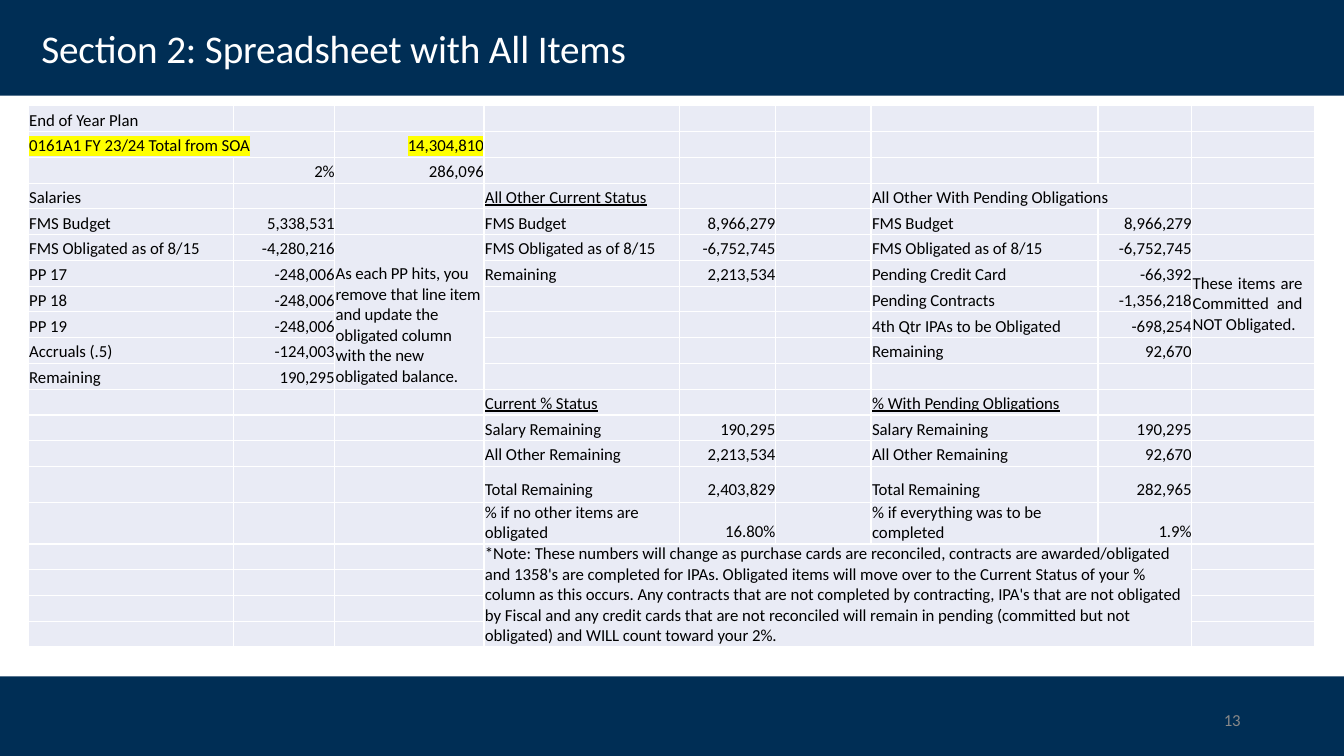
"""Build the end-of-year spreadsheet slide."""
from lxml import etree
from pptx import Presentation
from pptx.dml.color import RGBColor
from pptx.enum import shapes, text
from pptx.oxml import ns
from pptx.util import Inches, Pt

NAVY, WHITE, BLACK, GREY, PALE, YELLOW = "002E55", "FFFFFF", "000000", "888888", "E9EBF5", "FFFF00"
LEFT, RIGHT, JUSTIFY = text.PP_ALIGN.LEFT, text.PP_ALIGN.RIGHT, text.PP_ALIGN.JUSTIFY

COLUMNS = [2.04, 1, 1.48, 1.94, 0.95, 0.95, 2.25, 0.93, 1.22]
TABLE_HEIGHT, TOTAL_HEIGHT, PERCENT_HEIGHT = 5.37, 0.36, 0.41
PLAIN_HEIGHT = (TABLE_HEIGHT - TOTAL_HEIGHT - PERCENT_HEIGHT) / 18
ROWS = [PLAIN_HEIGHT] * 14 + [TOTAL_HEIGHT, PERCENT_HEIGHT] + [PLAIN_HEIGHT] * 4
MERGES = [(1, 0, 1, 1), (3, 6, 3, 7), (5, 2, 10, 2), (6, 8, 8, 8), (16, 3, 19, 7)]

BUDGET = [("FMS Budget", "8,966,279"), ("FMS Obligated as of 8/15", "-6,752,745")]
BLOCKS = [
    (4, 0, [("FMS Budget", "5,338,531"), ("FMS Obligated as of 8/15", "-4,280,216"),
            ("PP 17", "-248,006"), ("PP 18", "-248,006"), ("PP 19", "-248,006"),
            ("Accruals (.5)", "-124,003"), ("Remaining", "190,295")]),
    (4, 3, BUDGET + [("Remaining", "2,213,534")]),
    (4, 6, BUDGET + [("Pending Credit Card", "-66,392"), ("Pending Contracts", "-1,356,218"),
                     ("4th Qtr IPAs to be Obligated", "-698,254"), ("Remaining", "92,670")]),
    (12, 3, [("Salary Remaining", "190,295"), ("All Other Remaining", "2,213,534")]),
    (12, 6, [("Salary Remaining", "190,295"), ("All Other Remaining", "92,670")]),
]
TOTALS = [
    (3, "2,403,829", "% if no other items are obligated", "16.80%"),
    (6, "282,965", "% if everything was to be completed", "1.9%"),
]
PAY_NOTE = ("As each PP hits, you remove that line item and update the obligated column "
            "with the new obligated balance.")
PENDING_NOTE = "These items are Committed and NOT Obligated."
FOOTNOTE = (
    "*Note: These numbers will change as purchase cards are reconciled, contracts are "
    "awarded/obligated and 1358's are completed for IPAs. Obligated items will move over to the "
    "Current Status of your % column as this occurs. Any contracts that are not completed by "
    "contracting, IPA's that are not obligated by Fiscal and any credit cards that are not "
    "reconciled will remain in pending (committed but not obligated) and WILL count toward your 2%.")


def rgb(value):
    return RGBColor.from_string(value)


def add_color(parent, tag, value):
    holder = etree.SubElement(parent, ns.qn(tag))
    etree.SubElement(holder, ns.qn("a:srgbClr"), val=value)


def add_span(para, words, size, color, tracking=-3, underline=False, highlight=None):
    span = para.add_run()
    span.text = words
    span.font.size = Pt(size)
    span.font.color.rgb = rgb(color)
    if underline:
        span.font.underline = True
    properties = span._r.get_or_add_rPr()
    properties.set("spc", str(tracking))
    if highlight:
        add_color(properties, "a:highlight", highlight)
    span.font.name = "Calibri"


def clear_margins(frame):
    frame.margin_left = frame.margin_right = frame.margin_top = frame.margin_bottom = 0


def add_band(page, width, top, height):
    band = page.shapes.add_shape(shapes.MSO_SHAPE.RECTANGLE, 0, Inches(top), width, Inches(height))
    band.shadow.inherit = False
    band.fill.solid()
    band.fill.fore_color.rgb = rgb(NAVY)
    band.line.fill.background()
    page.shapes._spTree.insert(2, band._element)


def set_title(page, words):
    title = page.shapes.title
    title.left, title.top, title.width, title.height = map(Inches, (0.16, 0.15, 12.72, 0.65))
    frame = title.text_frame
    clear_margins(frame)
    frame.margin_left = Inches(0.25)
    frame.auto_size = text.MSO_AUTO_SIZE.NONE
    frame.vertical_anchor = text.MSO_ANCHOR.MIDDLE
    para = frame.paragraphs[0]
    para.alignment = LEFT
    add_span(para, words, 28, WHITE, tracking=-12)


def add_page_number(page, number):
    box = page.shapes.add_textbox(*map(Inches, (12.13, 7.03, 0.2, 0.23)))
    clear_margins(box.text_frame)
    box.text_frame.margin_left = Inches(0.01)
    box.text_frame.margin_top = Inches(0.01)
    box.text_frame.word_wrap = True
    add_span(box.text_frame.paragraphs[0], number, 12, GREY, tracking=-20)


def style_cell(cell):
    clear_margins(cell)
    cell.vertical_anchor = text.MSO_ANCHOR.TOP
    para = cell.text_frame.paragraphs[0]
    etree.SubElement(para._p, ns.qn("a:endParaRPr"), sz="1000")
    properties = cell._tc.get_or_add_tcPr()
    for side in "LRTB":
        border = etree.SubElement(properties, ns.qn(f"a:ln{side}"), w=str(Pt(1)))
        add_color(border, "a:solidFill", WHITE)
    cell.fill.solid()
    cell.fill.fore_color.rgb = rgb(PALE)


def fill_cell(cell, words, align=LEFT, top=0.05, spacing=Pt(14.1), **marks):
    cell.margin_top = Inches(top)
    if align != RIGHT:
        cell.margin_left = Inches(0.01)
    para = cell.text_frame.paragraphs[0]
    para.alignment = align
    para.line_spacing = spacing
    add_span(para, words, 12, BLACK, **marks)


def add_grid(page):
    frame = page.shapes.add_table(len(ROWS), len(COLUMNS), Inches(0.28), Inches(1.05),
                                  Inches(sum(COLUMNS)), Inches(TABLE_HEIGHT))
    table = frame.table
    table.first_row = table.horz_banding = False
    for column, width in zip(table.columns, COLUMNS):
        column.width = Inches(width)
    for row, height in zip(table.rows, ROWS):
        row.height = Inches(height)
    for cell in table.iter_cells():
        style_cell(cell)
    for top, left, bottom, right in MERGES:
        table.cell(top, left).merge(table.cell(bottom, right))
    return table


def fill_grid(table):
    fill_cell(table.cell(0, 0), "End of Year Plan")
    fill_cell(table.cell(1, 0), "0161A1 FY 23/24 Total from SOA", highlight=YELLOW)
    fill_cell(table.cell(1, 2), "14,304,810", RIGHT, highlight=YELLOW)
    fill_cell(table.cell(2, 1), "2%", RIGHT)
    fill_cell(table.cell(2, 2), "286,096", RIGHT)
    fill_cell(table.cell(3, 0), "Salaries")
    fill_cell(table.cell(3, 3), "All Other Current Status", underline=True)
    fill_cell(table.cell(3, 6), "All Other With Pending Obligations")
    fill_cell(table.cell(11, 3), "Current % Status", underline=True)
    fill_cell(table.cell(11, 6), "% With Pending Obligations", underline=True)
    for first, column, items in BLOCKS:
        for row, (label, amount) in enumerate(items, first):
            fill_cell(table.cell(row, column), label)
            fill_cell(table.cell(row, column + 1), amount, RIGHT)
    for column, total, label, percent in TOTALS:
        fill_cell(table.cell(14, column), "Total Remaining", top=0.14)
        fill_cell(table.cell(14, column + 1), total, RIGHT, top=0.14)
        fill_cell(table.cell(15, column), label, top=0, spacing=Pt(14.4))
        fill_cell(table.cell(15, column + 1), percent, RIGHT, top=0.19)
    fill_cell(table.cell(5, 2), PAY_NOTE, top=0.29, spacing=1.0, tracking=-8)
    fill_cell(table.cell(6, 8), PENDING_NOTE, JUSTIFY, top=0.13, spacing=1.0)
    table.cell(6, 8).margin_right = Inches(0.12)
    fill_cell(table.cell(16, 3), FOOTNOTE, top=0, spacing=1.0)


def main():
    deck = Presentation()
    deck.slide_width, deck.slide_height = Inches(13.33), Inches(7.5)
    page = deck.slides.add_slide(deck.slide_layouts[5])
    add_band(page, deck.slide_width, 0, 0.95)
    add_band(page, deck.slide_width, 6.71, 0.79)
    set_title(page, "Section 2: Spreadsheet with All Items")
    add_page_number(page, "13")
    fill_grid(add_grid(page))
    deck.save("out.pptx")


if __name__ == "__main__":
    main()
